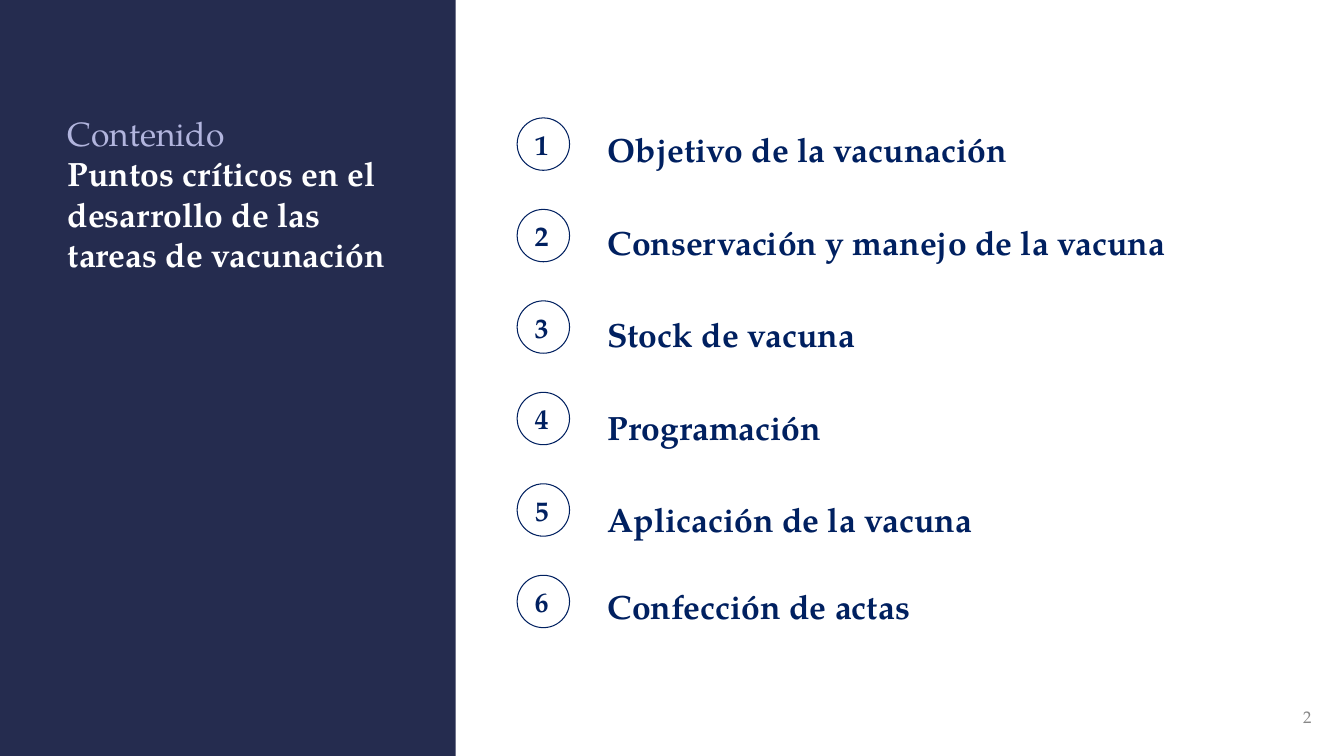
from typing import NamedTuple

from pptx import Presentation, util as u
from pptx.dml.color import RGBColor
from pptx.enum import shapes, text

NAVY = RGBColor(0x25, 0x2C, 0x4F)
INK = RGBColor(0x00, 0x20, 0x60)
LILAC = RGBColor(0xB2, 0xB5, 0xDE)
WHITE = RGBColor(0xFF, 0xFF, 0xFF)
GRAY = RGBColor(0x88, 0x88, 0x88)
FACE = "TeX Gyre Pagella"

WIDE, HIGH = u.Inches(13.33), u.Inches(7.5)
STEP = 12.1  # rows from one badge to the next

HEADS = ("Contenido", "Puntos críticos en el desarrollo de las tareas de vacunación")
TOPICS = (
    "Objetivo de la vacunación",
    "Conservación y manejo de la vacuna",
    "Stock de vacuna",
    "Programación",
    "Aplicación de la vacuna",
    "Confección de actas",
)


class Area(NamedTuple):
    """A place on the slide, in hundredths of its width and height."""
    col: float
    row: float
    cols: float
    rows: float

    def emu(self) -> tuple[int, int, int, int]:
        return (int(WIDE * self.col / 100), int(HIGH * self.row / 100),
                int(WIDE * self.cols / 100), int(HIGH * self.rows / 100))


class Style(NamedTuple):
    size: float
    color: RGBColor
    bold: bool = False


PANEL = Area(0, 0, 33.9, 100)
TITLE = Area(4.28, 14.27, 25.58, 28.27)
LIST = Area(44.48, 15.6, 53.85, 76.8)
BADGE = Area(38.48, 15.6, 3.9, 6.93)
PAGE = Area(75.83, 92.13, 22.5, 5.33)


def format_runs(para, style: Style) -> None:
    for run in para.runs:
        font = run.font
        font.name, font.size, font.bold = FACE, u.Pt(style.size), style.bold
        font.color.rgb = style.color


def add_panel(slide) -> None:
    panel = slide.shapes.add_shape(shapes.MSO_SHAPE.RECTANGLE, *PANEL.emu())
    panel.shadow.inherit = False
    panel.fill.solid()
    panel.fill.fore_color.rgb = NAVY
    panel.line.fill.background()


def set_title(slide) -> None:
    """Fill the title and bring it in front of the panel."""
    title = slide.shapes.title
    title.left, title.top, title.width, title.height = TITLE.emu()
    slide.shapes.element.append(title.element)
    frame = title.text_frame
    frame.text = "\n".join(HEADS)
    frame.auto_size = text.MSO_AUTO_SIZE.NONE
    frame.vertical_anchor = text.MSO_ANCHOR.TOP
    styles = (Style(24, LILAC), Style(24, WHITE, True))
    for para, style in zip(frame.paragraphs, styles):
        para.alignment = text.PP_ALIGN.LEFT
        format_runs(para, style)


def add_text(slide, area: Area, words: str, style: Style):
    frame = slide.shapes.add_textbox(*area.emu()).text_frame
    frame.word_wrap = True
    frame.text = words
    for para in frame.paragraphs:
        format_runs(para, style)
    return frame


def add_topics(slide) -> None:
    frame = add_text(slide, LIST, "\n".join(TOPICS), Style(24, INK, True))
    for para in frame.paragraphs[:-1]:
        para.line_spacing = 1.15
    for para in frame.paragraphs[1:]:
        para.space_before = u.Pt(33)


def add_badge(slide, index: int) -> None:
    area = BADGE._replace(row=BADGE.row + index * STEP)
    badge = slide.shapes.add_shape(shapes.MSO_SHAPE.OVAL, *area.emu())
    badge.shadow.inherit = False
    badge.fill.background()
    badge.line.color.rgb = INK
    badge.line.width = u.Pt(0.75)
    frame = badge.text_frame
    frame.margin_left = frame.margin_right = u.Inches(0.1)
    frame.margin_top = frame.margin_bottom = u.Inches(0.1)
    frame.vertical_anchor = text.MSO_ANCHOR.MIDDLE
    frame.text = str(index + 1)
    para = frame.paragraphs[0]
    para.alignment = text.PP_ALIGN.LEFT
    format_runs(para, Style(20, INK, True))


def add_page(slide) -> None:
    frame = add_text(slide, PAGE, "2", Style(12, GRAY))
    frame.vertical_anchor = text.MSO_ANCHOR.MIDDLE
    frame.paragraphs[0].alignment = text.PP_ALIGN.RIGHT


def main() -> None:
    deck = Presentation()
    deck.slide_width, deck.slide_height = WIDE, HIGH
    slide = deck.slides.add_slide(deck.slide_layouts[5])
    add_panel(slide)
    set_title(slide)
    add_topics(slide)
    for index in range(len(TOPICS)):
        add_badge(slide, index)
    add_page(slide)
    deck.save("out.pptx")


if __name__ == "__main__":
    main()
